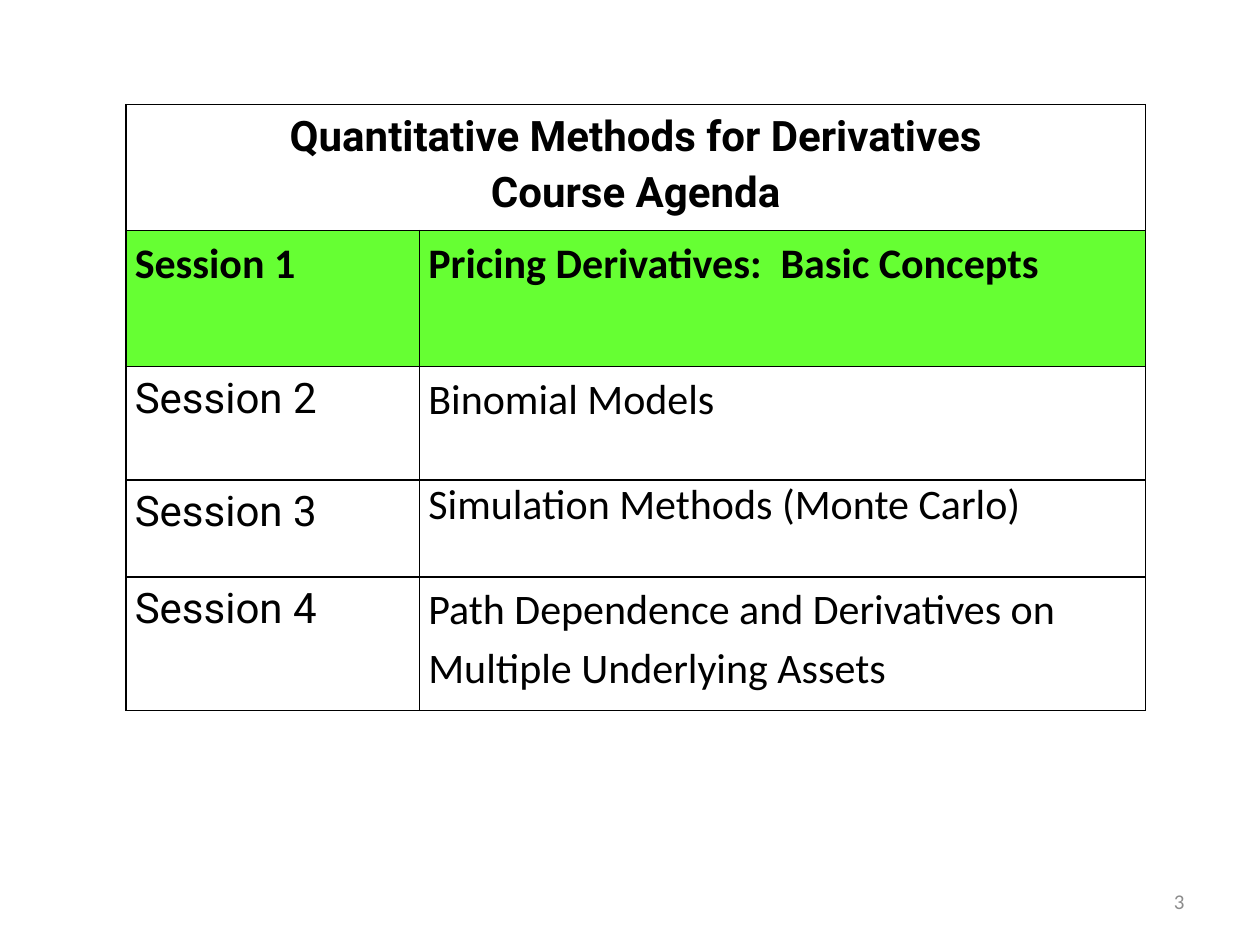
import pptx
import pptx.util
import pptx.dml.color
import pptx.enum.text
import pptx.oxml
import pptx.oxml.ns

Inches = pptx.util.Inches
Pt = pptx.util.Pt
Align = pptx.enum.text.PP_ALIGN
Anchor = pptx.enum.text.MSO_ANCHOR

theme = {
    "ink": "000000", "gray": "8C8C8C", "mark": "66FF33",
    "body": 24, "small": 12, "head": "Roboto", "text": "Calibri",
}


def style(para, face, size, tone, bold=False):
    for run in para.runs:
        run.font.name = face
        run.font.size = Pt(size)
        run.font.bold = bold
        run.font.color.rgb = pptx.dml.color.RGBColor.from_string(tone)


def border(cell):
    props = cell._tc.get_or_add_tcPr()
    for spot, side in enumerate(("lnL", "lnR", "lnT", "lnB")):
        line = pptx.oxml.parse_xml(
            f'<a:{side} {pptx.oxml.ns.nsdecls("a")} w="{Pt(1)}"><a:solidFill>'
            f'<a:srgbClr val="{theme["ink"]}"/></a:solidFill></a:{side}>')
        props.insert(spot, line)


deck = pptx.Presentation()
deck.slide_width = Inches(10)
deck.slide_height = Inches(7.5)
slide = deck.slides.add_slide(deck.slide_layouts[6])

page = slide.shapes.add_textbox(Inches(7.17), Inches(6.95), Inches(2.33), Inches(0.4))
frame = page.text_frame
frame.word_wrap = True
frame.vertical_anchor = Anchor.MIDDLE
frame.text = "3"
frame.paragraphs[0].alignment = Align.RIGHT
style(frame.paragraphs[0], theme["text"], theme["small"], theme["gray"])

title = "Quantitative Methods for Derivatives\nCourse Agenda"
topics = [
    "Pricing Derivatives:  Basic Concepts",
    "Binomial Models",
    "Simulation Methods (Monte Carlo)",
    "Path Dependence and Derivatives on Multiple Underlying Assets",
]
rows = [(title, "")] + [(f"Session {n}", topic) for n, topic in enumerate(topics, 1)]
widths = [2.33, 5.76]
heights = [1, 1.08, 0.9, 0.77, 1.06]

agenda = slide.shapes.add_table(
    len(rows), len(widths), Inches(1), Inches(0.83),
    Inches(sum(widths)), Inches(sum(heights))).table
for col, width in zip(agenda.columns, widths):
    col.width = Inches(width)
for row, height in zip(agenda.rows, heights):
    row.height = Inches(height)
agenda.cell(0, 0).merge(agenda.cell(0, 1))

for r, texts in enumerate(rows):
    for c, text in enumerate(texts):
        cell = agenda.cell(r, c)
        border(cell)
        cell.margin_left = cell.margin_right = Inches(0.07)
        cell.margin_top = cell.margin_bottom = 0
        if r == 1:
            cell.fill.solid()
            cell.fill.fore_color.rgb = pptx.dml.color.RGBColor.from_string(theme["mark"])
        else:
            cell.fill.background()
        if cell.is_spanned:
            continue
        cell.text_frame.text = text
        face = theme["head"] if c == 0 and r != 1 else theme["text"]
        for para in cell.text_frame.paragraphs:
            para.alignment = Align.CENTER if r == 0 else Align.LEFT
            para.line_spacing = 1.0 if (r, c) == (3, 1) else 1.15
            style(para, face, theme["body"], theme["ink"], bold=r < 2)

deck.save("out.pptx")
